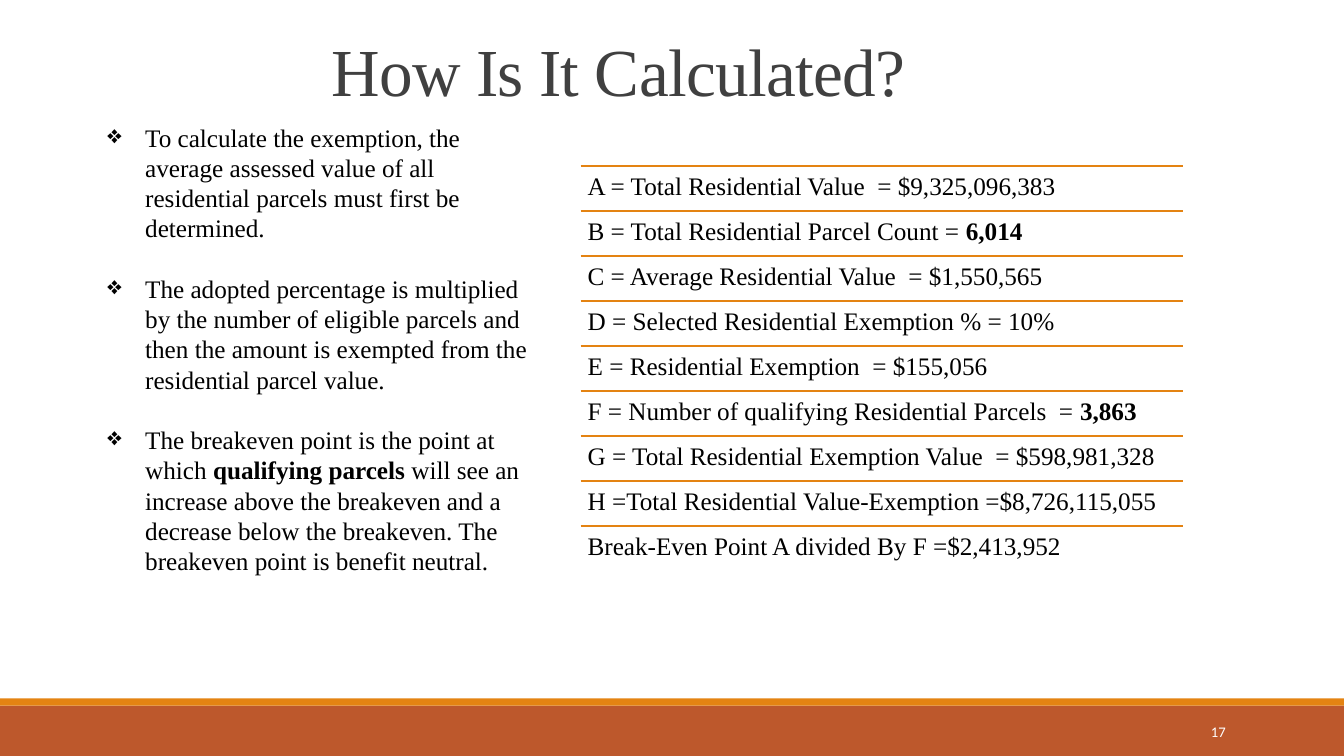
from lxml.etree import SubElement
from pptx import Presentation
from pptx.dml.color import RGBColor
from pptx.enum.shapes import MSO_CONNECTOR as Connector, MSO_SHAPE as Shape
from pptx.enum.text import MSO_ANCHOR as Anchor, MSO_AUTO_SIZE as AutoSize, PP_ALIGN as Align
from pptx.oxml.ns import qn
from pptx.util import Cm, Pt

POINTS = [
    "To calculate the exemption, the average assessed value of all residential parcels "
    "must first be determined.",
    "The adopted percentage is multiplied by the number of eligible parcels and then the "
    "amount is exempted from the residential parcel value.",
    "The breakeven point is the point at which **qualifying parcels **will see an increase "
    "above the breakeven and a decrease below the breakeven. The breakeven point is benefit neutral.",
]
STEPS = [
    "A = Total Residential Value  = $9,325,096,383",
    "B = Total Residential Parcel Count = **6,014",
    "C = Average Residential Value  = $1,550,565",
    "D = Selected Residential Exemption % = 10%",
    "E = Residential Exemption  = $155,056",
    "F = Number of qualifying Residential Parcels  = **3,863",
    "G = Total Residential Exemption Value  = $598,981,328",
    "H =Total Residential Value-Exemption =$8,726,115,055",
    "Break-Even Point A divided By F =$2,413,952",
]


def color(code):
    return RGBColor.from_string(code)


class Deck:
    """Holds the style and the current slide."""

    serif, sans = "Times New Roman", "Calibri"
    ink, heading, rust, orange, white = "000000", "404040", "BD582C", "E48312", "FFFFFF"

    def __init__(self):
        self.deck = Presentation()
        self.deck.slide_width, self.deck.slide_height = Cm(33.87), Cm(19.05)
        self.slide = self.deck.slides.add_slide(self.deck.slide_layouts[5])

    def style(self, run, size, code, font):
        run.font.size, run.font.name = Pt(size), font
        run.font.color.rgb = color(code)

    def title(self, text, left, top, width, height):
        title = self.slide.shapes.title
        title.left, title.top, title.width, title.height = map(Cm, (left, top, width, height))
        frame = title.text_frame
        frame.text = text
        frame.auto_size, frame.vertical_anchor = AutoSize.NONE, Anchor.BOTTOM
        line = frame.paragraphs[0]
        line.alignment, line.line_spacing, line.space_after = Align.LEFT, 0.75, Pt(6)
        self.style(line.runs[0], 48, self.heading, self.serif)
        line.runs[0].font._element.set("spc", "-50")

    def band(self, top, height, code):
        band = self.slide.shapes.add_shape(Shape.RECTANGLE, 0, Cm(top), self.deck.slide_width, Cm(height))
        band.shadow.inherit = False
        band.fill.solid()
        band.fill.fore_color.rgb = color(code)
        band.line.fill.background()

    def rule(self, left, top, width):
        rule = self.slide.shapes.add_connector(
            Connector.STRAIGHT, Cm(left), Cm(top), Cm(left + width), Cm(top))
        rule.line.color.rgb, rule.line.width = color(self.orange), Pt(1.25)
        SubElement(rule._element.spPr, qn("a:effectLst"))

    def text(self, texts, left, top, width, height, size=18, code=ink, font=serif,
             inset=None, spacing=None, after=0, align=Align.LEFT, anchor=Anchor.TOP):
        frame = self.slide.shapes.add_textbox(Cm(left), Cm(top), Cm(width), Cm(height)).text_frame
        frame.word_wrap, frame.vertical_anchor = True, anchor
        if inset is not None:
            frame.margin_left = frame.margin_right = frame.margin_top = frame.margin_bottom = Cm(inset)
        for index, text in enumerate(texts):
            line = frame.add_paragraph() if index else frame.paragraphs[0]
            line.alignment, line.line_spacing, line.space_after = align, spacing, Pt(after)
            for part, words in enumerate(text.split("**")):
                run = line.add_run()
                run.text = words
                run.font.bold = part % 2 == 1
                self.style(run, size, code, font)
        return frame

    def bullets(self, texts, left, top, width, height, pitch):
        frame = self.text(texts, left, top, width, height, spacing=Pt(pitch), after=pitch)
        for line in frame.paragraphs:
            properties = line._p.get_or_add_pPr()
            properties.set("marL", str(Cm(0.95)))
            properties.set("indent", str(-Cm(0.95)))
            SubElement(properties, qn("a:buChar")).set("char", "❖")

    def ruled_rows(self, texts, left, top, width, pitch):
        for index, text in enumerate(texts):
            row_top = top + index * pitch
            self.rule(left, row_top, width)
            self.text([text], left, row_top, width, pitch, inset=0.18, spacing=0.9)


def main():
    page = Deck()
    page.band(17.78, 1.27, page.rust)
    page.band(17.6, 0.18, page.orange)
    page.title("How Is It Calculated?", 8.1, 1.04, 17.3, 1.83)
    page.bullets(POINTS, 2.46, 2.95, 11.43, 11.8, pitch=21.6)
    page.ruled_rows(STEPS, 14.63, 4.19, 15.19, pitch=9.07 / 8)
    page.text(["17"], 27.51, 17.93, 3.63, 1.02, size=10.5, code=page.white, font=page.sans,
              align=Align.RIGHT, anchor=Anchor.MIDDLE)
    page.deck.save("out.pptx")


if __name__ == "__main__":
    main()
